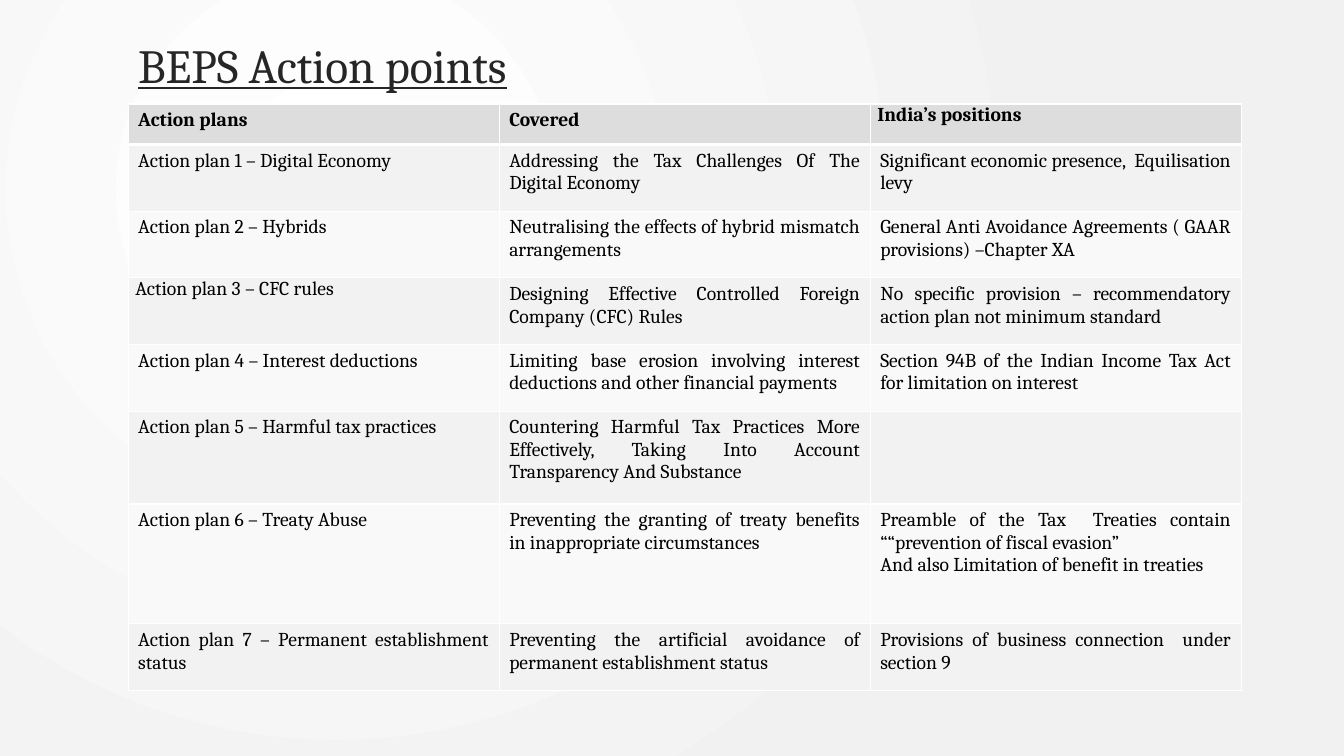
import pptx
import pptx.util
import pptx.dml.color
import pptx.enum.text
import pptx.oxml.ns
import pptx.oxml.xmlchemy
from pptx.util import Cm

THEME = {
    "font": "Cambria",
    "title_size": 34,
    "cell_size": 14,
    "title": "262626",
    "text": "000000",
    "line": "FFFFFF",
    "header": "DDDDDD",
    "bands": ["F2F2F2", "F9F9F9"],
    "glow": ["FFFFFF", "F1F1F1"],
}
ROWS = [
    ["Action plans ", "Covered ", "India’s positions "],
    ["Action plan 1 – Digital Economy",
     "Addressing the Tax Challenges Of The Digital Economy",
     "Significant economic presence,  Equilisation levy"],
    ["Action plan 2 – Hybrids ",
     "Neutralising the effects of hybrid mismatch arrangements",
     "General Anti Avoidance Agreements ( GAAR provisions) –Chapter XA"],
    ["Action plan 3 – CFC rules ",
     "Designing Effective Controlled Foreign Company (CFC) Rules",
     "No specific provision – recommendatory action plan not minimum standard "],
    ["Action plan 4 – Interest deductions ",
     "Limiting base erosion involving interest deductions and other financial payments",
     "Section 94B of the Indian Income Tax Act for limitation on interest"],
    ["Action plan 5 – Harmful tax practices",
     "Countering Harmful Tax Practices More Effectively, "
     "Taking Into Account Transparency And Substance",
     ""],
    ["Action plan 6 – Treaty Abuse ",
     "Preventing the granting of treaty benefits in inappropriate circumstances",
     "Preamble of the Tax  Treaties contain ““prevention of fiscal evasion”\n"
     "And also Limitation of benefit in treaties "],
    ["Action plan 7 – Permanent establishment status ",
     "Preventing the artificial avoidance of permanent establishment status",
     "Provisions of business connection  under section 9 "],
]
ROW_HEIGHTS = [1.02, 1.68, 1.68, 1.68, 1.68, 2.34, 3.02, 1.68]
COLUMN_WIDTH = 9.35
TIGHT_CELLS = [(0, 2), (3, 0)]
TIGHT_MARGINS = {"margin_left": Cm(0.18), "margin_right": Cm(0.18),
                 "margin_top": 0, "margin_bottom": 0}


def apply_format(target, values):
    for name, value in values.items():
        setattr(target, name, value)


def add_border(cell, side, points):
    """Draw one edge of a cell; side is L, R, T or B."""
    line = pptx.oxml.xmlchemy.OxmlElement(f"a:ln{side}")
    line.set("w", str(pptx.util.Pt(points)))
    fill = pptx.oxml.xmlchemy.OxmlElement("a:solidFill")
    color = pptx.oxml.xmlchemy.OxmlElement("a:srgbClr")
    color.set("val", THEME["line"])
    fill.append(color)
    line.append(fill)
    cell._tc.get_or_add_tcPr().append(line)


deck = pptx.Presentation()
apply_format(deck, {"slide_width": Cm(33.87), "slide_height": Cm(19.05)})
page = deck.slides.add_slide(deck.slide_layouts[5])

# Radial background, centred in the upper left quarter
glow = page.background.fill
glow.gradient()
for stop, color in zip(glow.gradient_stops, THEME["glow"]):
    stop.color.rgb = pptx.dml.color.RGBColor.from_string(color)
gradient = page.element.find(".//" + pptx.oxml.ns.qn("a:gradFill"))
gradient.remove(gradient.find(pptx.oxml.ns.qn("a:lin")))
circle = pptx.oxml.xmlchemy.OxmlElement("a:path")
circle.set("path", "circle")
focus = pptx.oxml.xmlchemy.OxmlElement("a:fillToRect")
for side, percent in {"l": 50, "t": 50, "r": 100, "b": 100}.items():
    focus.set(side, str(percent * 1000))
circle.append(focus)
gradient.append(circle)

title = page.shapes.title
apply_format(title, {"left": Cm(3.23), "top": Cm(0.61),
                     "width": Cm(24.77), "height": Cm(2.01)})
apply_format(title.text_frame, {
    "text": "BEPS Action points",
    "vertical_anchor": pptx.enum.text.MSO_ANCHOR.MIDDLE,
    "auto_size": pptx.enum.text.MSO_AUTO_SIZE.NONE,
})
heading = title.text_frame.paragraphs[0]
heading.alignment = pptx.enum.text.PP_ALIGN.LEFT
span = heading.runs[0]
apply_format(span.font, {"name": THEME["font"], "underline": True,
                         "size": pptx.util.Pt(THEME["title_size"])})
span.font.color.rgb = pptx.dml.color.RGBColor.from_string(THEME["title"])

table = page.shapes.add_table(
    len(ROWS), len(ROWS[0]), Cm(3.23), Cm(2.62),
    Cm(COLUMN_WIDTH * len(ROWS[0])), Cm(sum(ROW_HEIGHTS))).table
for column in table.columns:
    column.width = Cm(COLUMN_WIDTH)
for row, height in zip(table.rows, ROW_HEIGHTS):
    row.height = Cm(height)

for row_number, texts in enumerate(ROWS):
    is_header = row_number == 0
    shade = THEME["header"] if is_header else THEME["bands"][(row_number - 1) % 2]
    borders = {"L": 1, "R": 1, "T": 3 if row_number == 1 else 1,
               "B": 3 if is_header else 1}
    for column_number, text in enumerate(texts):
        cell = table.cell(row_number, column_number)
        for side, points in borders.items():
            add_border(cell, side, points)
        cell.fill.solid()
        cell.fill.fore_color.rgb = pptx.dml.color.RGBColor.from_string(shade)
        if (row_number, column_number) in TIGHT_CELLS:
            apply_format(cell, TIGHT_MARGINS)
        cell.text = text
        for para in cell.text_frame.paragraphs:
            para.alignment = pptx.enum.text.PP_ALIGN.JUSTIFY
            apply_format(para.font, {"size": pptx.util.Pt(THEME["cell_size"])})
            for span in para.runs:
                apply_format(span.font, {
                    "name": THEME["font"], "bold": is_header,
                    "size": pptx.util.Pt(THEME["cell_size"])})
                span.font.color.rgb = pptx.dml.color.RGBColor.from_string(THEME["text"])

deck.save("out.pptx")
